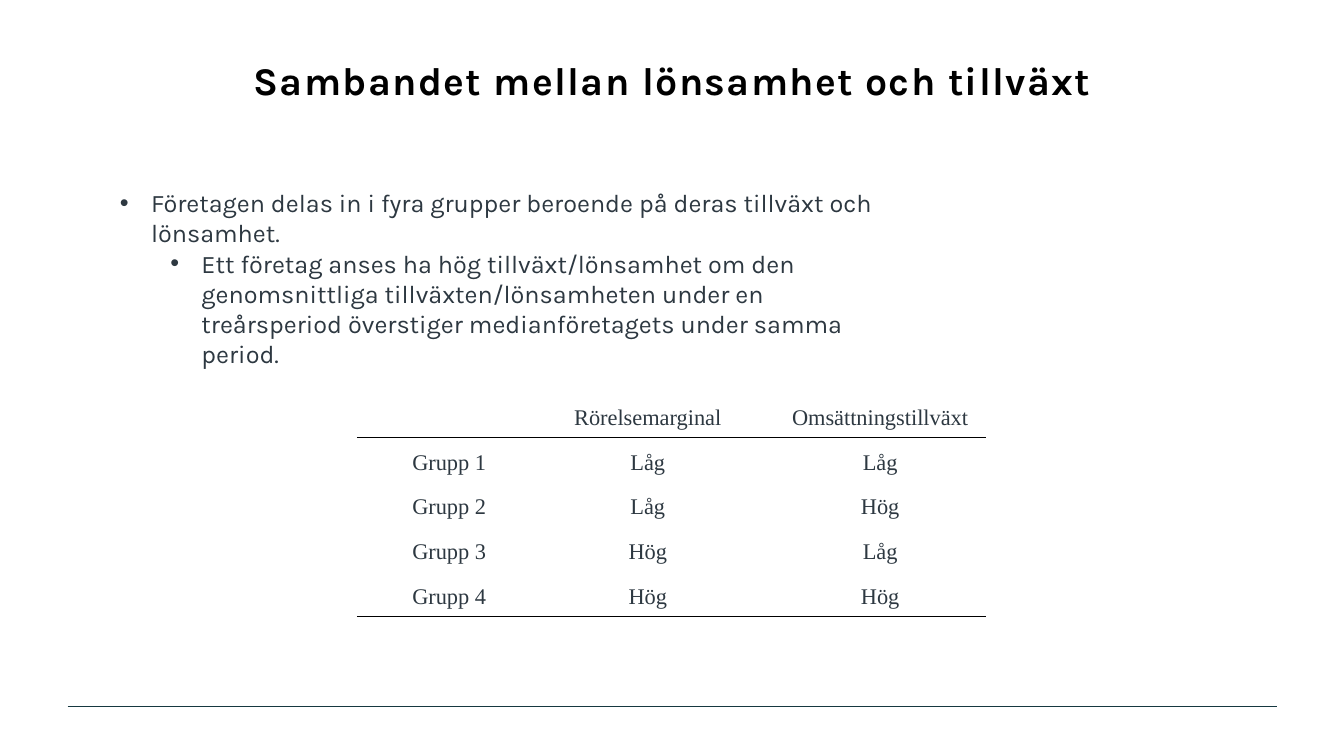
import pptx
import pptx.util
import pptx.dml.color
import pptx.enum.shapes
import pptx.enum.text
import pptx.oxml
import pptx.oxml.ns

Inches = pptx.util.Inches
Pt = pptx.util.Pt
CENTER = pptx.enum.text.PP_ALIGN.CENTER
TOP = pptx.enum.text.MSO_ANCHOR.TOP
NS = pptx.oxml.ns.nsdecls("a")

COLORS = {"title": "000000", "text": "2D3841", "rule": "000000", "footer": "163840"}
TITLE_FONT = {"name": "Karla", "size": Pt(28), "bold": True}
BODY_FONT = {"name": "Karla", "size": Pt(18), "bold": False}
CELL_FONT = {"name": "Times New Roman", "size": Pt(16), "bold": False}
CELL_FORMAT = {"alignment": CENTER, "line_spacing": 1.5, "space_after": Pt(8)}
CELL_BOX = {
    "margin_left": Inches(0.05),
    "margin_right": Inches(0.05),
    "margin_top": 0,
    "margin_bottom": 0,
    "vertical_anchor": TOP,
}

BULLETS = [
    (0, "Företagen delas in i fyra grupper beroende på deras tillväxt och lönsamhet."),
    (1, "Ett företag anses ha hög tillväxt/lönsamhet om den genomsnittliga "
        "tillväxten/lönsamheten under en treårsperiod överstiger "
        "medianföretagets under samma period."),
]
GROUPS = [
    ("", "Rörelsemarginal", "Omsättningstillväxt"),
    ("Grupp 1", "Låg", "Låg"),
    ("Grupp 2", "Låg", "Hög"),
    ("Grupp 3", "Hög", "Låg"),
    ("Grupp 4", "Hög", "Hög"),
]
COLUMN_WIDTHS = (1.63, 2.31, 2.3)
TABLE_HEIGHT = 2.22
NO_STYLE = "{2D5ABB26-0587-4C30-8999-92F81FD0307C}"


def apply(target, values):
    for name, value in values.items():
        setattr(target, name, value)


def rgb(key):
    return pptx.dml.color.RGBColor.from_string(COLORS[key])


def add_run(p, text, font, color):
    r = p.add_run()
    r.text = text
    apply(r.font, font)
    r.font.color.rgb = rgb(color)
    return r


def set_title(s, text):
    sp = s.shapes.title
    apply(sp, {"left": Inches(0.67), "top": Inches(0.51),
               "width": Inches(12), "height": Inches(1.25)})
    tf = sp.text_frame
    apply(tf, {"vertical_anchor": TOP, "word_wrap": True,
               "auto_size": pptx.enum.text.MSO_AUTO_SIZE.NONE})
    p = tf.paragraphs[0]
    p.alignment = CENTER
    r = add_run(p, text, TITLE_FONT, "title")
    r.font._element.set("spc", "100")


def add_bullets(s):
    sp = s.shapes.add_textbox(Inches(1.09), Inches(1.81), Inches(7.69), Inches(2.22))
    tf = sp.text_frame
    tf.word_wrap = True
    for i, (level, text) in enumerate(BULLETS):
        p = tf.add_paragraph() if i else tf.paragraphs[0]
        p.level = level
        pPr = p._p.get_or_add_pPr()
        pPr.set("marL", str(Inches(0.31 + 0.5 * level)))
        pPr.set("indent", str(Inches(-0.31)))
        pPr.append(pptx.oxml.parse_xml(f'<a:buFont {NS} typeface="Arial"/>'))
        pPr.append(pptx.oxml.parse_xml(f'<a:buChar {NS} char="•"/>'))
        add_run(p, text, BODY_FONT, "text")


def add_bottom_border(cell):
    cell._tc.get_or_add_tcPr().insert(0, pptx.oxml.parse_xml(
        f'<a:lnB {NS} w="{Pt(1)}"><a:solidFill><a:srgbClr val="{COLORS["rule"]}"/>'
        '</a:solidFill></a:lnB>'))


def fill_cell(cell, text):
    cell.fill.background()
    apply(cell, CELL_BOX)
    if text:
        p = cell.text_frame.paragraphs[0]
        apply(p, CELL_FORMAT)
        p._p.get_or_add_pPr().set("marL", str(Inches(0.2)))
        add_run(p, text, CELL_FONT, "text")


def add_group_table(s):
    frame = s.shapes.add_table(len(GROUPS), len(COLUMN_WIDTHS), Inches(3.54), Inches(3.9),
                               Inches(sum(COLUMN_WIDTHS)), Inches(TABLE_HEIGHT))
    table = frame.table
    apply(table, {"first_row": False, "horz_banding": False})
    table._tbl.tblPr.find(pptx.oxml.ns.qn("a:tableStyleId")).text = NO_STYLE
    for column, width in zip(table.columns, COLUMN_WIDTHS):
        column.width = Inches(width)
    for i, values in enumerate(GROUPS):
        table.rows[i].height = Inches(TABLE_HEIGHT / len(GROUPS))
        for j, text in enumerate(values):
            cell = table.cell(i, j)
            fill_cell(cell, text)
            if i in (0, len(GROUPS) - 1):
                add_bottom_border(cell)


def add_footer_line(s):
    line = s.shapes.add_connector(pptx.enum.shapes.MSO_CONNECTOR.STRAIGHT,
                                  Inches(0.67), Inches(7.01), Inches(12.67), Inches(7.01))
    line.line.color.rgb = rgb("footer")
    line.line.width = Pt(1)
    line._element.spPr.append(pptx.oxml.parse_xml(f"<a:effectLst {NS}/>"))


def main():
    prs = pptx.Presentation()
    apply(prs, {"slide_width": Inches(13.33), "slide_height": Inches(7.5)})
    s = prs.slides.add_slide(prs.slide_layouts[5])
    add_footer_line(s)
    set_title(s, "Sambandet mellan lönsamhet och tillväxt")
    add_group_table(s)
    add_bullets(s)
    prs.save("out.pptx")


if __name__ == "__main__":
    main()
